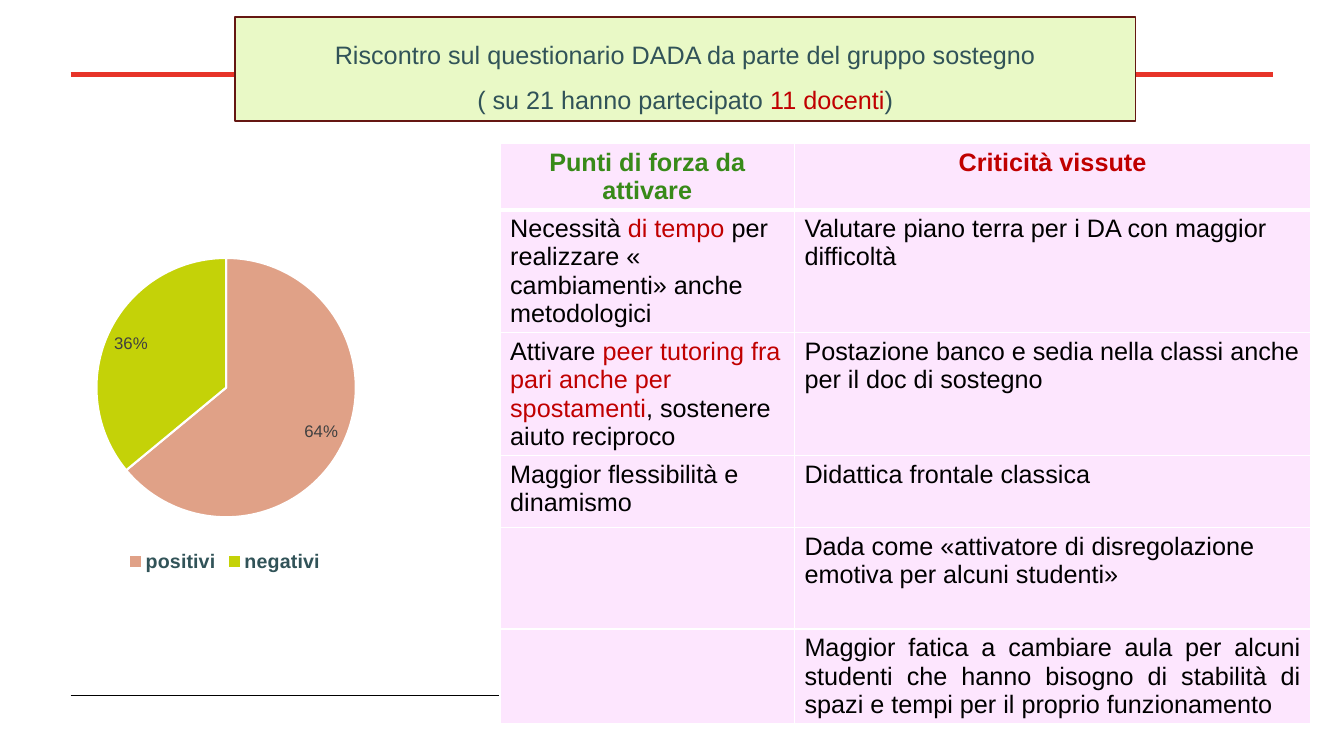
from dataclasses import dataclass

from lxml.etree import SubElement
from pptx import Presentation
from pptx.chart.data import CategoryChartData
from pptx.dml.color import RGBColor
from pptx.enum.chart import XL_CHART_TYPE as ChartType
from pptx.enum.chart import XL_LABEL_POSITION as LabelPosition
from pptx.enum.chart import XL_LEGEND_POSITION as LegendPosition
from pptx.enum.shapes import MSO_CONNECTOR as Connector
from pptx.enum.text import MSO_ANCHOR as Anchor
from pptx.enum.text import MSO_AUTO_SIZE as AutoSize
from pptx.enum.text import PP_ALIGN as Align
from pptx.oxml.ns import qn
from pptx.util import Inches, Pt

COLORS = {
    "red_rule": "E73429", "black": "000000", "white": "FFFFFF",
    "teal": "315358", "crimson": "C00000", "green": "388A19",
    "title_fill": "E9F9C6", "title_line": "651712", "cell": "FDE6FE",
    "positive": "E0A187", "negative": "C4D208", "label": "404040",
}
FONT = "Arial"


@dataclass(frozen=True)
class Span:
    """A stretch of text in one colour."""
    text: str
    color: str = "black"
    bold: bool = False


@dataclass(frozen=True)
class Line:
    """A paragraph made of spans."""
    spans: tuple[Span, ...]
    align: Align = Align.LEFT


@dataclass(frozen=True)
class Rule:
    """A horizontal line across the slide."""
    top: float
    color: str
    width: float


@dataclass(frozen=True)
class Row:
    """A table row with its height and two cells."""
    height: float
    strength: Line | None
    weakness: Line


@dataclass(frozen=True)
class Slice:
    """A pie slice."""
    name: str
    value: int
    color: str


RULES = (Rule(0.74, "red_rule", 3), Rule(6.9, "black", 0.5))
SLICES = (Slice("positivi", 64, "positive"), Slice("negativi", 36, "negative"))
TITLE = (
    Line((Span("Riscontro sul questionario DADA da parte del gruppo sostegno", "teal"),),
         Align.CENTER),
    Line((Span("( su 21 hanno partecipato ", "teal"), Span("11 docenti", "crimson"),
          Span(")", "teal")), Align.CENTER),
)
ROWS = (
    Row(0.49, Line((Span("Punti di forza da attivare", "green", True),), Align.CENTER),
        Line((Span("Criticità vissute", "crimson", True),), Align.CENTER)),
    Row(1.01, Line((Span("Necessità "), Span("di tempo ", "crimson"),
                    Span("per realizzare « cambiamenti» anche metodologici"))),
        Line((Span("Valutare piano terra per i DA con maggior difficoltà"),))),
    Row(1.01, Line((Span("Attivare "),
                    Span("peer tutoring fra pari anche per spostamenti", "crimson"),
                    Span(", sostenere aiuto reciproco"))),
        Line((Span("Postazione banco e sedia nella classi anche per il doc di sostegno"),))),
    Row(0.71, Line((Span("Maggior flessibilità e dinamismo"),)),
        Line((Span("Didattica frontale classica"),))),
    Row(1.01, None,
        Line((Span("Dada come «attivatore di disregolazione emotiva per alcuni studenti»"),))),
    Row(0.71, None,
        Line((Span("Maggior fatica a cambiare aula per alcuni studenti che hanno bisogno di "
                   "stabilità di spazi e tempi per il proprio funzionamento"),), Align.JUSTIFY)),
)


def rgb(name: str) -> RGBColor:
    """Return a palette colour."""
    return RGBColor.from_string(COLORS[name])


def style_font(font, size: float, color: str, bold: bool = False) -> None:
    """Apply typeface, size, colour and weight."""
    font.name, font.size, font.bold = FONT, Pt(size), bold
    font.color.rgb = rgb(color)


def write_line(paragraph, line: Line) -> None:
    """Write the spans of a line into a paragraph."""
    paragraph.alignment = line.align
    for span in line.spans:
        run = paragraph.add_run()
        run.text = span.text
        style_font(run.font, 18, span.color, span.bold)


def add_rule(slide, rule: Rule) -> None:
    """Draw a horizontal rule."""
    connector = slide.shapes.add_connector(
        Connector.STRAIGHT, Inches(0.7), Inches(rule.top), Inches(12.63), Inches(rule.top))
    connector.line.color.rgb = rgb(rule.color)
    connector.line.width = Pt(rule.width)
    SubElement(connector._element.spPr, qn("a:effectLst"))


def add_pie(slide) -> None:
    """Add the pie chart of the answers."""
    data = CategoryChartData()
    data.categories = [part.name for part in SLICES]
    data.add_series("Series 1", [part.value for part in SLICES])
    chart = slide.shapes.add_chart(ChartType.PIE, Inches(0.33), Inches(2.11),
                                   Inches(3.8), Inches(3.61), data).chart
    style_font(chart.font, 10, "black")
    chart.has_title = False
    chart.has_legend = True
    chart.legend.position = LegendPosition.BOTTOM
    chart.legend.include_in_layout = False
    style_font(chart.legend.font, 14, "teal", True)
    plot = chart.plots[0]
    plot.vary_by_categories = True
    for index, part in enumerate(SLICES):
        point = plot.series[0].points[index]
        point.format.fill.solid()
        point.format.fill.fore_color.rgb = rgb(part.color)
        point.format.line.color.rgb = rgb("white")
        point.format.line.width = Pt(1.5)
    labels = plot.series[0].data_labels
    labels.show_percentage, labels.show_value = True, False
    labels.number_format, labels.number_format_is_linked = "0%", False
    labels.position = LabelPosition.INSIDE_END
    style_font(labels.font, 12, "label")
    plot_area = chart._chartSpace.chart.plotArea
    layout = plot_area.find(qn("c:layout"))
    if layout is None:
        layout = SubElement(plot_area, qn("c:layout"))
        plot_area.insert(0, layout)
    manual = SubElement(layout, qn("c:manualLayout"))
    for tag, value in (("layoutTarget", "inner"), ("xMode", "edge"), ("yMode", "edge"),
                       ("x", "0.165"), ("y", "0.066"), ("w", "0.677"), ("h", "0.83")):
        SubElement(manual, qn(f"c:{tag}")).set("val", value)


def format_cell(cell, line: Line | None, bottom_width: float) -> None:
    """Give a cell its borders, fill and text."""
    properties = cell._tc.get_or_add_tcPr()
    for side, width in (("L", 1), ("R", 1), ("T", 1), ("B", bottom_width)):
        border = SubElement(properties, qn(f"a:ln{side}"), w=str(Pt(width)))
        fill = SubElement(border, qn("a:solidFill"))
        SubElement(fill, qn("a:srgbClr"), val=COLORS["white"])
    cell.fill.solid()
    cell.fill.fore_color.rgb = rgb("cell")
    if line:
        write_line(cell.text_frame.paragraphs[0], line)


def add_answers(slide) -> None:
    """Add the table of strengths and weaknesses."""
    table = slide.shapes.add_table(len(ROWS), 2, Inches(4.96), Inches(1.42),
                                   Inches(8.04), Inches(5.81)).table
    table.horz_banding = False
    for column, width in zip(table.columns, (2.92, 5.12)):
        column.width = Inches(width)
    for index, row in enumerate(ROWS):
        table.rows[index].height = Inches(row.height)
        for column, line in enumerate((row.strength, row.weakness)):
            format_cell(table.cell(index, column), line, 1 if index else 3)


def format_title(slide) -> None:
    """Place and fill the title in front of the rules."""
    title = slide.shapes.title
    title.left, title.top = Inches(2.33), Inches(0.17)
    title.width, title.height = Inches(8.93), Inches(1.03)
    title.fill.solid()
    title.fill.fore_color.rgb = rgb("title_fill")
    title.line.color.rgb = rgb("title_line")
    title.line.width = Pt(1)
    frame = title.text_frame
    frame.word_wrap, frame.auto_size = True, AutoSize.NONE
    frame.vertical_anchor = Anchor.MIDDLE
    for index, line in enumerate(TITLE):
        paragraph = frame.add_paragraph() if index else frame.paragraphs[0]
        paragraph.line_spacing = 1.5
        paragraph.space_before = Pt(0)
        write_line(paragraph, line)
    title._element.getparent().append(title._element)


def main() -> None:
    """Build and save the slide."""
    presentation = Presentation()
    presentation.slide_width, presentation.slide_height = Inches(13.33), Inches(7.5)
    slide = presentation.slides.add_slide(presentation.slide_layouts[5])
    for rule in RULES:
        add_rule(slide, rule)
    add_pie(slide)
    add_answers(slide)
    format_title(slide)
    presentation.save("out.pptx")


if __name__ == "__main__":
    main()
